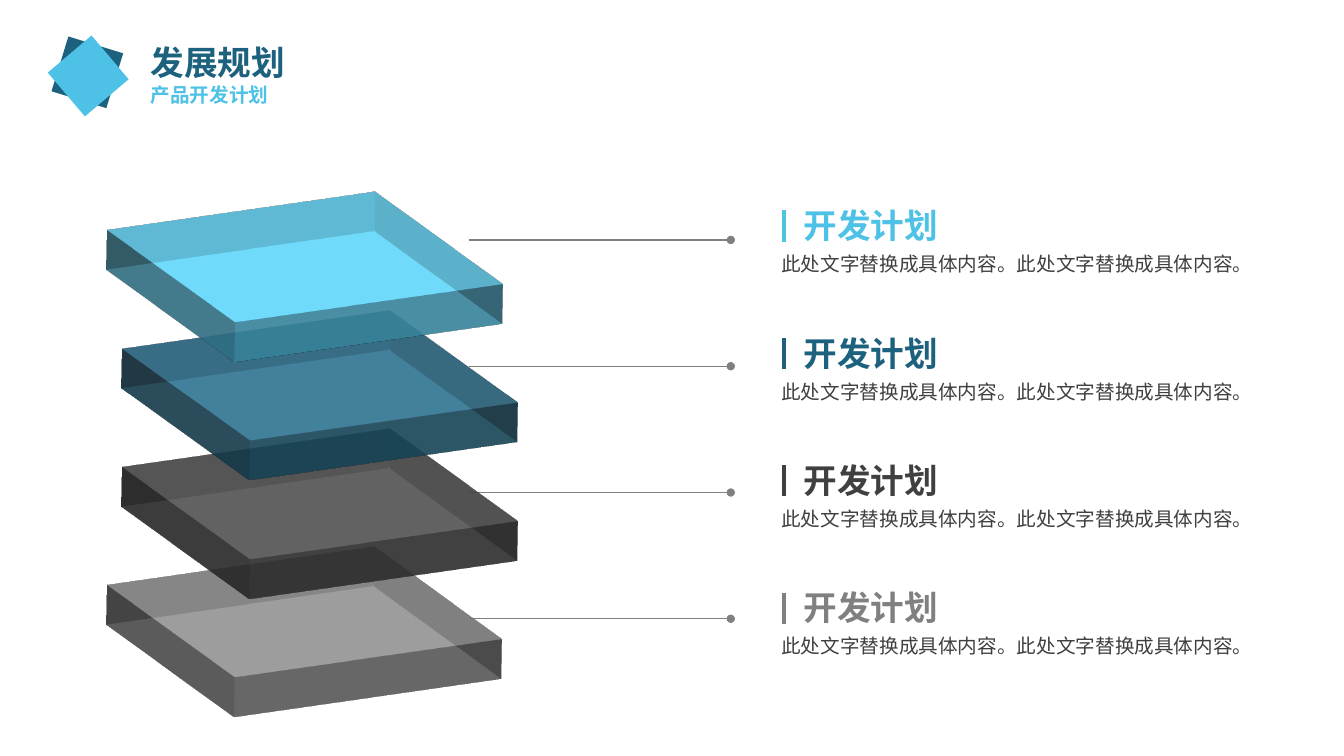
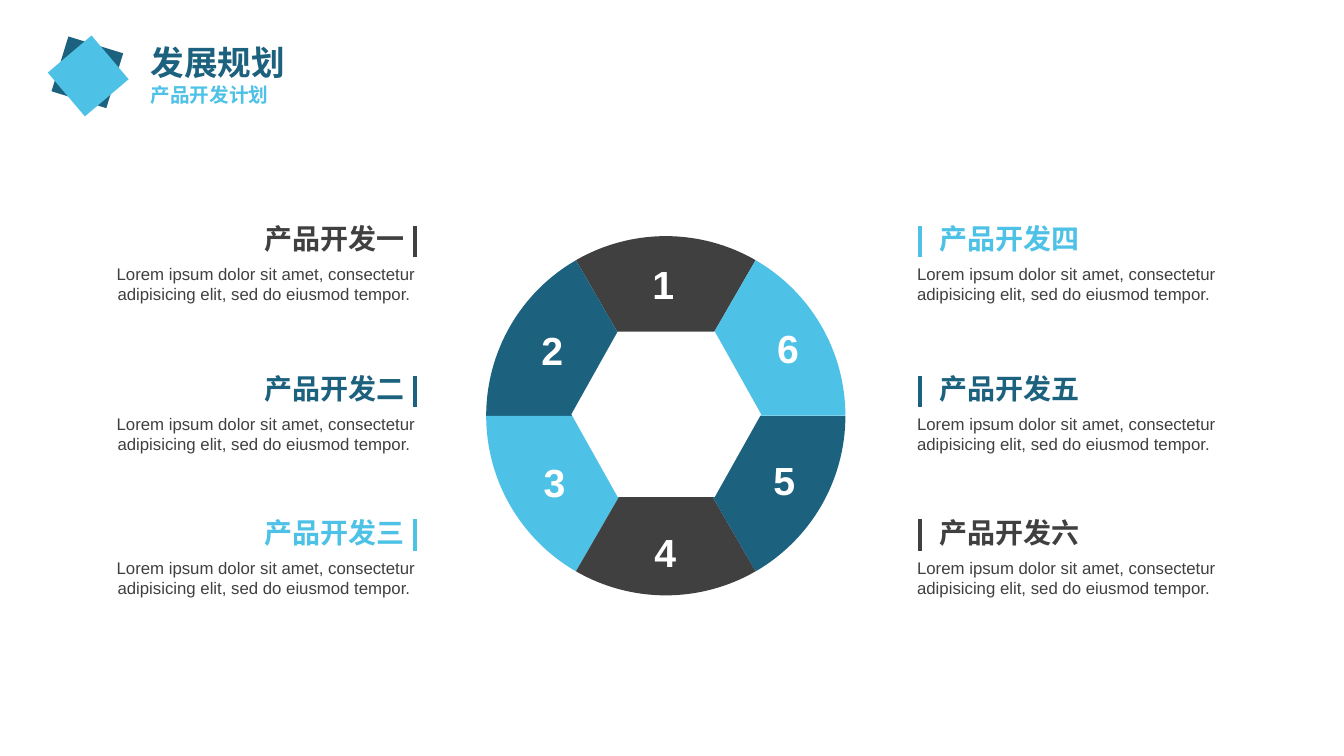
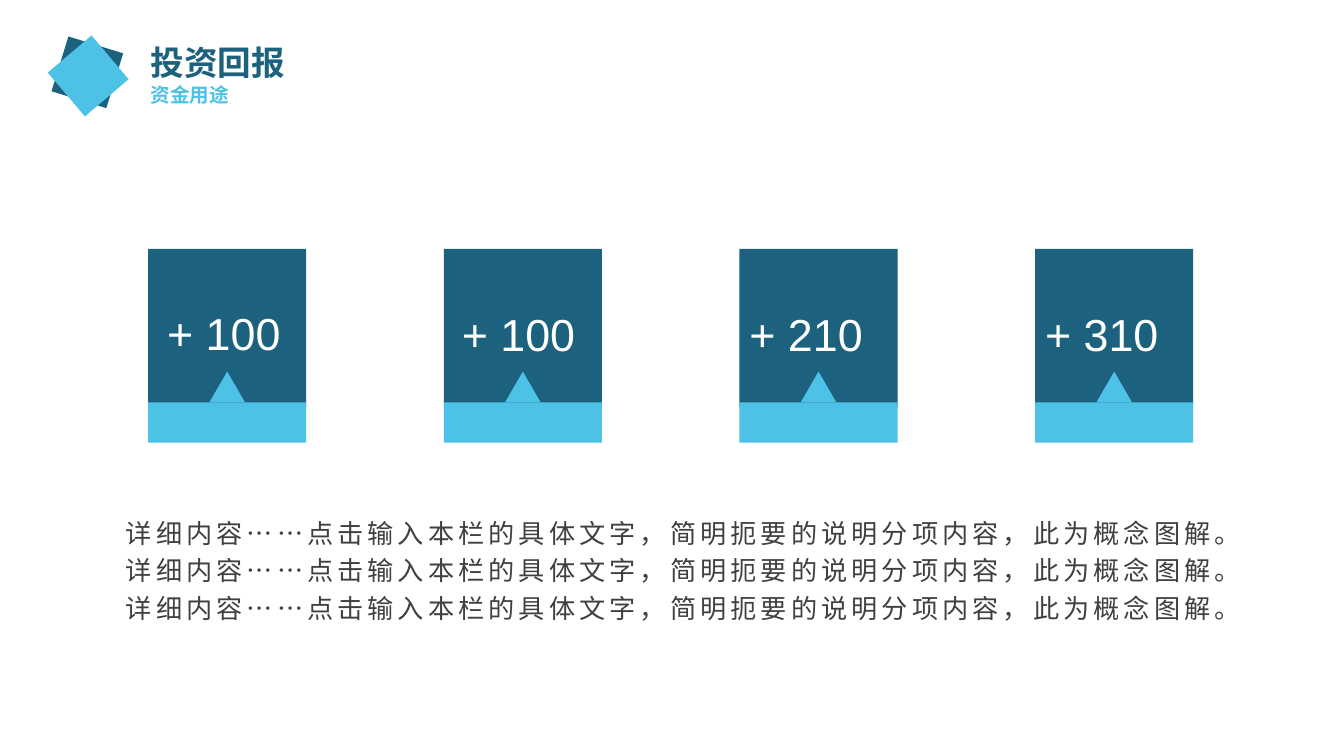
from dataclasses import dataclass
from math import cos, radians, sin

from lxml.etree import SubElement
from pptx import Presentation
from pptx.dml.color import RGBColor
from pptx.enum.shapes import MSO_CONNECTOR as Connector, MSO_SHAPE as Preset
from pptx.enum.text import MSO_AUTO_SIZE as AutoSize, PP_ALIGN as Align
from pptx.oxml.ns import qn
from pptx.util import Pt


@dataclass(frozen=True)
class Theme:
    font: str = "Arial"
    deep: str = "1C617E"
    bright: str = "4EC2E6"
    dark: str = "404040"
    gray: str = "808080"
    white: str = "FFFFFF"
    title: float = 24
    subtitle: float = 14
    heading: float = 20
    body: float = 12
    digit: float = 28
    amount: float = 32
    detail: float = 18.7


theme = Theme()


def write(slide, place, lines, size, color, bold=False, align=Align.LEFT, wrap=True, leading=None, tracking=0):
    frame = slide.shapes.add_textbox(*map(Pt, place)).text_frame
    frame.word_wrap = wrap
    frame.auto_size = AutoSize.SHAPE_TO_FIT_TEXT
    for index, line in enumerate(lines):
        para = frame.add_paragraph() if index else frame.paragraphs[0]
        para.alignment = align
        if leading:
            para.line_spacing = leading
        span = para.add_run()
        span.text = line
        span.font.name = theme.font
        span.font.size = Pt(size)
        span.font.bold = bold
        span.font.color.rgb = RGBColor.from_string(color)
        properties = span._r.get_or_add_rPr()
        properties.set("lang", "en-US" if line.isascii() else "zh-CN")
        if tracking:
            properties.set("spc", str(round(tracking * 100)))


def rule(slide, ends, color, weight, dot=False):
    line = slide.shapes.add_connector(Connector.STRAIGHT, *map(Pt, ends))
    line.line.color.rgb = RGBColor.from_string(color)
    line.line.width = Pt(weight)
    if dot:
        SubElement(line.line._get_or_add_ln(), qn("a:tailEnd"), type="oval")
    SubElement(line.element.spPr, qn("a:effectLst"))


deck = Presentation()
deck.slide_width, deck.slide_height = Pt(960), Pt(540)
blank = deck.slide_layouts[6]
solids = []

pages = []
for title, subtitle in [("发展规划", "产品开发计划"), ("发展规划", "产品开发计划"), ("投资回报", "资金用途")]:
    page = deck.slides.add_slide(blank)
    write(page, (100.4, 26.6, 111.4, 36), [title], theme.title, theme.deep, bold=True, wrap=False)
    subtitle_width = theme.subtitle * len(subtitle) + 15.4
    write(page, (100.4, 55.4, subtitle_width, 24.5), [subtitle], theme.subtitle, theme.bright, bold=True, wrap=False)
    pages.append(page)
plan, ring, funding = pages

backdrop = [
    (0, 0, 960, 540, 0, theme.white, 60),
    (41.9, 31.2, 41, 41, 17.1, theme.deep, 100),
    (42.5, 33.8, 41, 41, 49.7, theme.bright, 100),
]
for left, top, width, height, angle, color, opacity in backdrop:
    panel = plan.shapes.add_shape(Preset.RECTANGLE, Pt(left), Pt(top), Pt(width), Pt(height))
    panel.rotation = angle
    blank.shapes.element.append(panel.element)
    solids.append((panel, color, opacity))

layer_colors = [theme.bright, theme.deep, theme.dark, theme.gray]
for row, color in enumerate(layer_colors):
    drop = 91 * row
    arm = 171.4 + 90.2 * row
    rule(plan, (334.8, arm, 522, arm), theme.gray, 1, dot=True)
    write(plan, (567, 143 + drop, 301, 36), ["开发计划"], theme.title, color, bold=True)
    rule(plan, (560.2, 150.3 + drop, 560.2, 172.6 + drop), color, 3)
    write(plan, (551, 176.6 + drop, 363, 24.5), ["此处文字替换成具体内容。" * 2], theme.subtitle, theme.dark)

slab_lefts = [112.2, 122.5, 122.5, 111.6]
for level in reversed(range(len(layer_colors))):
    slab = plan.shapes.add_shape(
        Preset.RECTANGLE, Pt(slab_lefts[level]), Pt(77.8 + 84.5 * level), Pt(211.7), Pt(211.7))
    solids.append((slab, layer_colors[level], 70))
    scene = SubElement(slab.element.spPr, qn("a:scene3d"))
    camera = SubElement(scene, qn("a:camera"), prst="isometricOffAxis1Top")
    SubElement(camera, qn("a:rot"), lat="18126000", lon="18552000", rev="3252000")
    SubElement(scene, qn("a:lightRig"), rig="threePt", dir="t")
    SubElement(slab.element.spPr, qn("a:sp3d"), extrusionH=str(Pt(30)))

filler = "Lorem ipsum dolor sit amet, consectetur adipisicing elit, sed do eiusmod tempor."
ring_colors = [theme.dark, theme.deep, theme.bright]
columns = [
    ("一二三", ring_colors, filler + " ", 15.9, 280, 296.2, 39.8, 264, Align.RIGHT),
    ("四五六", ring_colors[::-1], filler, 663.8, 290, 657, 648, 270, Align.LEFT),
]
for numerals, colors, text, heading_left, heading_width, bar, body_left, body_width, align in columns:
    for numeral, color, top in zip(numerals, colors, (154.8, 261.7, 364.3)):
        write(ring, (heading_left, top, heading_width, 31.5), ["产品开发" + numeral],
              theme.heading, color, bold=True, align=align)
        rule(ring, (bar, top + 6.7, bar, top + 29), color, 3)
        write(ring, (body_left, top + 30.2, body_width, 36), [text], theme.body, theme.dark, align=align)

center_x, center_y, radius = 475.6, 297, 128.3
digit_places = [(439.9, 182.2), (360.7, 229.9), (362.2, 324), (441.4, 373.7), (526.3, 322.6), (529, 228.2)]
for index, (digit_left, digit_top) in enumerate(digit_places):
    start = 60 + 60 * index
    outline = ring.shapes.build_freeform(Pt(center_x), Pt(center_y))
    outline.add_line_segments([
        (Pt(center_x + radius * cos(radians(angle))), Pt(center_y - radius * sin(radians(angle))))
        for angle in (start, start + 30, start + 60)
    ])
    wedge = outline.convert_to_shape()
    for path in wedge.element.iter(qn("a:path")):
        chords = path.findall(qn("a:lnTo"))
        arc = SubElement(path, qn("a:arcTo"), wR=str(Pt(radius)), hR=str(Pt(radius)),
                         stAng=str((360 - start) % 360 * 60000), swAng=str(-60 * 60000))
        chords[0].addnext(arc)
        for chord in chords[1:]:
            path.remove(chord)
    solids.append((wedge, ring_colors[index % 3], 100))
    write(ring, (digit_left, digit_top, 67.7, 41), [str(index + 1)],
          theme.digit, theme.white, bold=True, align=Align.CENTER)
hole = ring.shapes.add_shape(Preset.HEXAGON, Pt(408.2), Pt(236.9), Pt(135.4), Pt(118.1))
hole.adjustments[0] = 0.28
solids.append((hole, theme.white, 100))

amounts = [("+ 100", 6.5, 214.6), ("+ 100", 5.8, 215.6), ("+ 210", 0, 215.6), ("+ 310", 0, 215.6)]
card_parts = [
    (Preset.RECTANGLE, 0, 177.8, 113, 113, theme.deep),
    (Preset.RECTANGLE, 0, 287.5, 113, 28.8, theme.bright),
    (Preset.ISOSCELES_TRIANGLE, 43.8, 265.4, 25.4, 22, theme.bright),
]
for index, (amount, indent, amount_top) in enumerate(amounts):
    card_left = 105.8 + 211.2 * index
    for preset, offset, top, width, height, color in card_parts:
        part = funding.shapes.add_shape(preset, Pt(card_left + offset), Pt(top), Pt(width), Pt(height))
        solids.append((part, color, 100))
    write(funding, (card_left + indent, amount_top, 107.3, 46), [amount], theme.amount, theme.white)
detail = "详细内容……点击输入本栏的具体文字，简明扼要的说明分项内容，此为概念图解。"
write(funding, (82.8, 361.2, 815.8, 118), [detail] * 3, theme.detail, theme.dark, leading=1.2, tracking=2.9)

for shape, color, opacity in solids:
    shape.shadow.inherit = False
    shape.line.fill.background()
    shape.fill.solid()
    shape.fill.fore_color.rgb = RGBColor.from_string(color)
    if opacity < 100:
        swatch = shape.element.spPr.find(qn("a:solidFill")).find(qn("a:srgbClr"))
        SubElement(swatch, qn("a:alpha"), val=str(opacity * 1000))

deck.save("out.pptx")
